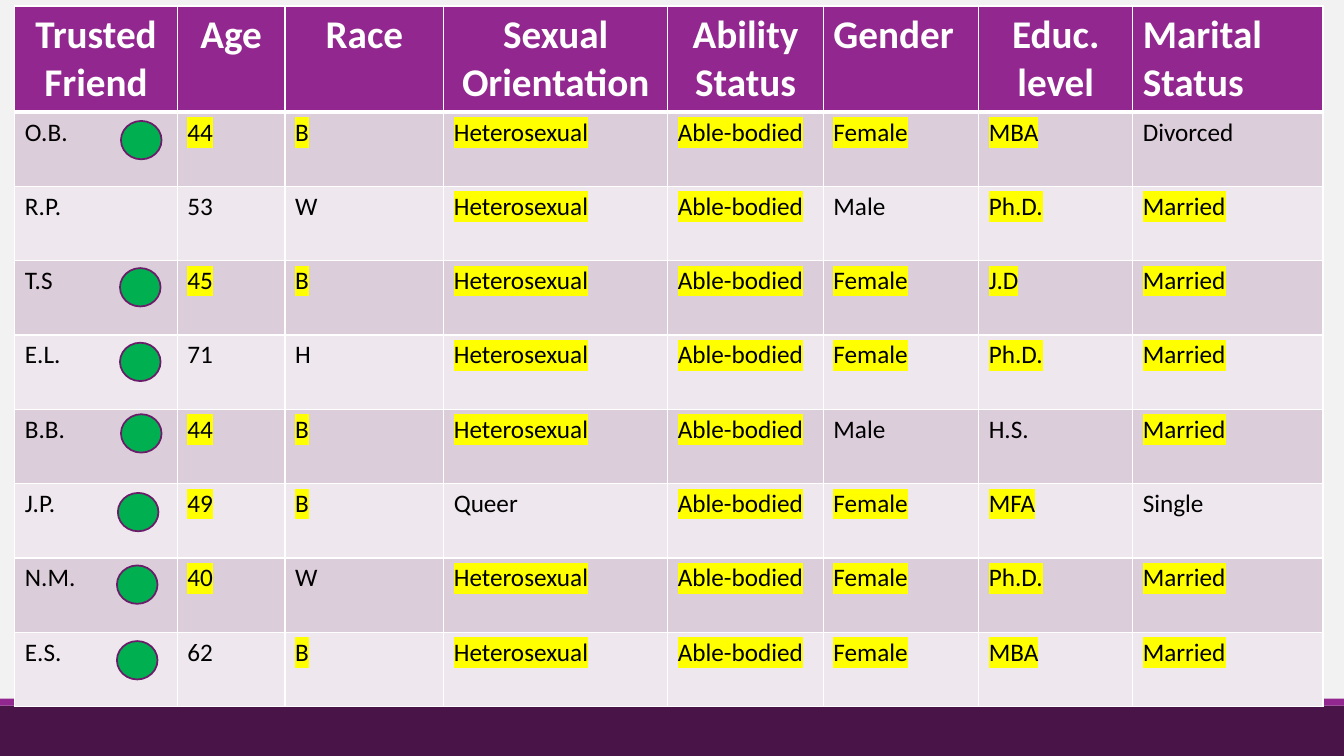
from lxml import etree
from pptx import Presentation
from pptx.dml.color import RGBColor
from pptx.enum.shapes import MSO_SHAPE as Shape
from pptx.enum.text import PP_ALIGN as Align
from pptx.oxml.ns import qn
from pptx.util import Pt

HEADERS = ["Trusted Friend", "Age", "Race", "Sexual Orientation",
           "Ability Status", "Gender", "Educ. level", "Marital Status"]
LEFT_HEADERS = {"Gender", "Marital Status"}
FRIENDS = [
    ["O.B.", "44", "B", "Heterosexual", "Able-bodied", "Female", "MBA", "Divorced"],
    ["R.P.", "53", "W", "Heterosexual", "Able-bodied", "Male", "Ph.D.", "Married"],
    ["T.S", "45", "B", "Heterosexual", "Able-bodied", "Female", "J.D", "Married"],
    ["E.L.", "71", "H", "Heterosexual", "Able-bodied", "Female", "Ph.D.", "Married"],
    ["B.B.", "44", "B", "Heterosexual", "Able-bodied", "Male", "H.S.", "Married"],
    ["J.P.", "49", "B", "Queer", "Able-bodied", "Female", "MFA", "Single"],
    ["N.M.", "40", "W", "Heterosexual", "Able-bodied", "Female", "Ph.D.", "Married"],
    ["E.S.", "62", "B", "Heterosexual", "Able-bodied", "Female", "MBA", "Married"],
]
SHARED_TRAITS = {"40", "44", "45", "49", "B", "Heterosexual", "Able-bodied",
                 "Female", "MBA", "MFA", "Ph.D.", "J.D", "Married"}
COLUMN_WIDTHS = [116, 77, 113.4, 160, 111.2, 111, 110, 136]
HEADER_HEIGHT, ROW_HEIGHT = 75, 53.1
FRIEND_DOTS = [(86.4, 86.4), (85.7, 191.5), (85.7, 244.8), (86.4, 295.9),
               (84.2, 352.1), (83.5, 403.9), (83.5, 457.9)]


def color(hex_string):
    return RGBColor.from_string(hex_string)


class SlideBuilder:
    font = "Calibri"
    purple = "92278F"
    dark_purple = "491447"
    outline = "6C1D6A"
    green = "00B050"
    white = "FFFFFF"
    black = "000000"
    yellow = "FFFF00"
    bands = ["DCCDDB", "EEE8EE"]

    def __init__(self, slide):
        self.slide = slide

    def background(self, fill):
        self.slide.background.fill.solid()
        self.slide.background.fill.fore_color.rgb = color(fill)

    def shape(self, kind, left, top, width, height, fill, line=None):
        shape = self.slide.shapes.add_shape(kind, Pt(left), Pt(top), Pt(width), Pt(height))
        shape.shadow.inherit = False
        shape.fill.solid()
        shape.fill.fore_color.rgb = color(fill)
        if line:
            shape.line.color.rgb = color(line)
            shape.line.width = Pt(1.25)
        else:
            shape.line.fill.background()

    def highlight(self, run):
        mark = etree.SubElement(run.font._element, qn("a:highlight"))
        etree.SubElement(mark, qn("a:srgbClr"), val=self.yellow)

    def borders(self, cell, top, bottom):
        properties = cell._tc.get_or_add_tcPr()
        sides = [("L", 1), ("R", 1), ("T", top), ("B", bottom)]
        for position, (side, width) in enumerate(sides):
            line = etree.Element(qn(f"a:ln{side}"), w=str(Pt(width)))
            fill = etree.SubElement(line, qn("a:solidFill"))
            etree.SubElement(fill, qn("a:srgbClr"), val=self.white)
            properties.insert(position, line)

    def cell(self, cell, text, row):
        header = row == 0
        cell.fill.solid()
        cell.fill.fore_color.rgb = color(self.purple if header else self.bands[(row - 1) % 2])
        self.borders(cell, 3 if row == 1 else 1, 3 if header else 1)
        paragraph = cell.text_frame.paragraphs[0]
        centred = header and text not in LEFT_HEADERS
        paragraph.alignment = Align.CENTER if centred else Align.LEFT
        paragraph.font.name = self.font
        paragraph.font.size = Pt(28 if header else 18)
        paragraph.font.bold = header
        paragraph.font.color.rgb = color(self.white if header else self.black)
        run = paragraph.add_run()
        run.text = text
        if text in SHARED_TRAITS:
            self.highlight(run)

    def table(self, left, top, rows, widths, heights):
        table = self.slide.shapes.add_table(
            len(rows), len(widths), Pt(left), Pt(top), Pt(sum(widths)), Pt(sum(heights))).table
        for column, width in zip(table.columns, widths):
            column.width = Pt(width)
        for index, (values, height) in enumerate(zip(rows, heights)):
            table.rows[index].height = Pt(height)
            for column, text in enumerate(values):
                self.cell(table.cell(index, column), text, index)


def main():
    presentation = Presentation()
    presentation.slide_width, presentation.slide_height = Pt(960), Pt(540)
    builder = SlideBuilder(presentation.slides.add_slide(presentation.slide_layouts[6]))
    builder.background("F2F2F2")
    builder.shape(Shape.RECTANGLE, 0, 504, 960, 36, builder.dark_purple)
    builder.shape(Shape.RECTANGLE, 0, 499, 960, 5, builder.purple)
    builder.table(10.6, 4.3, [HEADERS] + FRIENDS, COLUMN_WIDTHS,
                  [HEADER_HEIGHT] + [ROW_HEIGHT] * len(FRIENDS))
    for left, top in FRIEND_DOTS:
        builder.shape(Shape.OVAL, left, top, 29, 27.4, builder.green, builder.outline)
    presentation.save("out.pptx")


if __name__ == "__main__":
    main()
